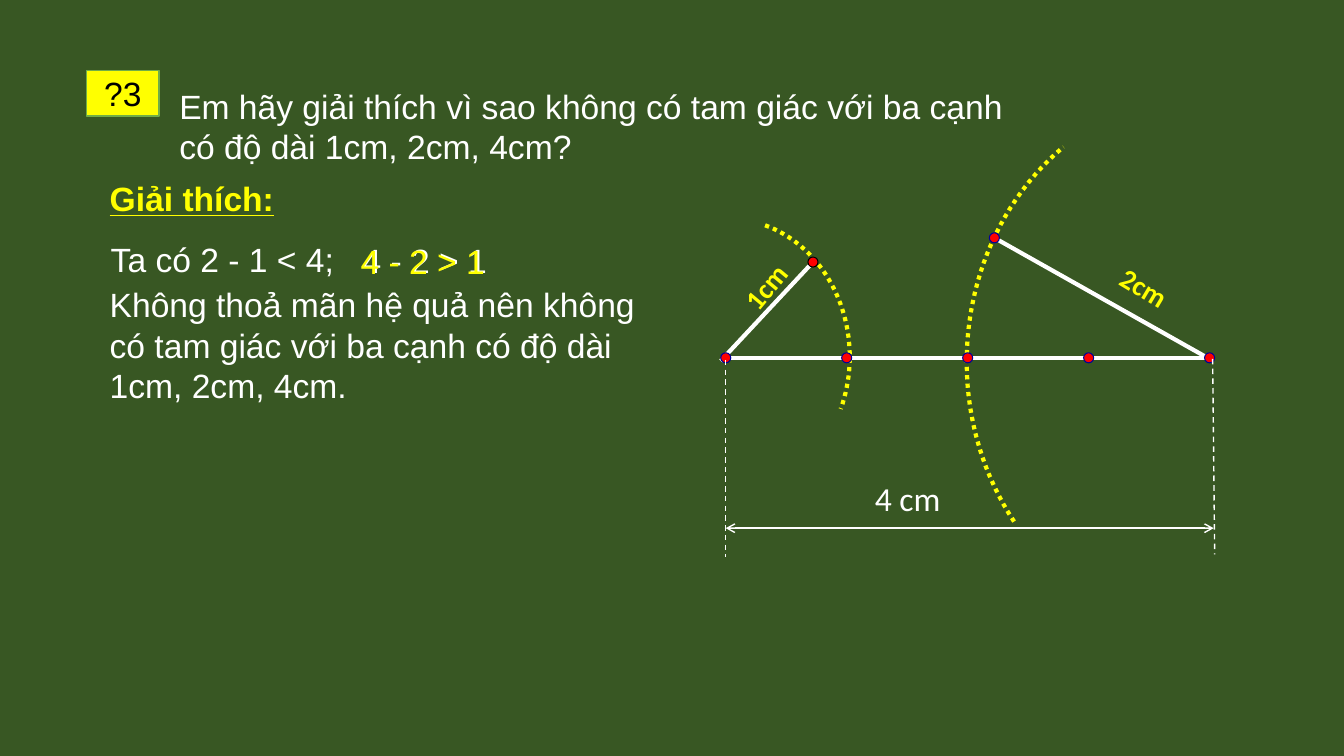
import math

import pptx
import pptx.dml.color
import pptx.enum.dml
import pptx.enum.shapes
import pptx.enum.text
import pptx.oxml
import pptx.oxml.ns
import pptx.util

COLORS = {
    "board": "385723",
    "white": "FFFFFF",
    "yellow": "FFFF00",
    "green": "70AD47",
    "red": "FF0000",
    "navy": "000099",
    "black": "000000",
}
COLUMNS, ROWS = 133.33, 75
DASH = pptx.enum.dml.MSO_LINE.DASH
DOTS = pptx.enum.dml.MSO_LINE.ROUND_DOT


class GeometrySlide:
    """Draws styled elements on one slide, placed on a grid of columns and rows."""

    def __init__(self, presentation):
        self.column = presentation.slide_width / COLUMNS
        self.row = presentation.slide_height / ROWS
        self.slide = presentation.slides.add_slide(presentation.slide_layouts[6])
        self.shapes = self.slide.shapes
        self.paint(self.slide.background.fill, "board")

    def color(self, name):
        return pptx.dml.color.RGBColor.from_string(COLORS[name])

    def paint(self, fill, name):
        fill.solid()
        fill.fore_color.rgb = self.color(name)

    def place(self, *lengths):
        units = (self.column, self.row) * 2
        return [round(length * unit) for length, unit in zip(lengths, units)]

    def stroke(self, shape, name, width, dash=None):
        self.paint(shape.line.fill, name)
        shape.line.width = pptx.util.Pt(width)
        if dash:
            shape.line.dash_style = dash

    def add_runs(self, paragraph, runs, color, size, font="Arial", bold=False, underline=False):
        for text, run_size in runs:
            run = paragraph.add_run()
            run.text = text
            run.font.name = font
            run.font.size = pptx.util.Pt(run_size or size)
            run.font.bold = bold
            run.font.underline = underline
            run.font.color.rgb = self.color(color)

    def text(self, box, runs, color="white", size=24, wrap=True, rotation=0, **style):
        shape = self.shapes.add_textbox(*self.place(*box))
        shape.rotation = rotation
        frame = shape.text_frame
        frame.word_wrap = wrap
        frame.auto_size = pptx.enum.text.MSO_AUTO_SIZE.SHAPE_TO_FIT_TEXT
        self.add_runs(frame.paragraphs[0], runs, color, size, **style)

    def shape(self, kind, box, fill, line, width):
        shape = self.shapes.add_shape(kind, *self.place(*box))
        shape.shadow.inherit = False
        self.paint(shape.fill, fill)
        self.stroke(shape, line, width)
        return shape

    def badge(self, box, label):
        shape = self.shape(pptx.enum.shapes.MSO_SHAPE.RECTANGLE, box, "yellow", "green", 1)
        frame = shape.text_frame
        frame.vertical_anchor = pptx.enum.text.MSO_ANCHOR.MIDDLE
        paragraph = frame.paragraphs[0]
        paragraph.alignment = pptx.enum.text.PP_ALIGN.CENTER
        self.add_runs(paragraph, [(label, None)], "black", 24)

    def point(self, x, y, line="navy"):
        box = (x - 0.5, y - 0.5, 1, 1)
        self.shape(pptx.enum.shapes.MSO_SHAPE.OVAL, box, "red", line, 0)

    def arc(self, center, radii, start, end, steps=40):
        angles = [math.radians(start + (end - start) * i / steps) for i in range(steps + 1)]
        vertices = [
            self.place(center[0] + radii[0] * math.cos(a), center[1] + radii[1] * math.sin(a))
            for a in angles
        ]
        builder = self.shapes.build_freeform(*vertices[0])
        builder.add_line_segments(vertices[1:], close=False)
        shape = builder.convert_to_shape()
        shape.shadow.inherit = False
        shape.fill.background()
        self.stroke(shape, "yellow", 3, DOTS)

    def segment(self, start, end, width=3, dash=None, arrows=False):
        straight = pptx.enum.shapes.MSO_CONNECTOR.STRAIGHT
        connector = self.shapes.add_connector(straight, *self.place(*start, *end))
        self.stroke(connector, "white", width, dash)
        properties = connector._element.spPr
        if arrows:
            line = properties.find(pptx.oxml.ns.qn("a:ln"))
            for tag in ("headEnd", "tailEnd"):
                line.append(self.element(tag, 'type="arrow"'))
        properties.append(self.element("effectLst"))

    def element(self, tag, attributes=""):
        return pptx.oxml.parse_xml(f"<a:{tag} {pptx.oxml.ns.nsdecls('a')} {attributes}/>")


def main():
    presentation = pptx.Presentation()
    presentation.slide_width = pptx.util.Inches(13.33)
    presentation.slide_height = pptx.util.Inches(7.5)
    board = GeometrySlide(presentation)

    board.badge((8.6, 7, 7.2, 4.5), "?3")
    question = "Em hãy giải thích vì sao không có tam giác với ba cạnh có độ dài 1cm, 2cm, 4cm?"
    board.text((16.8, 8, 86, 9.1), [(question, None)])
    board.text((9.9, 17.2, 18.4, 5), [("Giải thích:", None)], "yellow",
               wrap=False, bold=True, underline=True)
    board.text((10, 23.2, 24.2, 5), [("Ta có 2 - 1 < 4;", None)])
    board.text((34.1, 23.3, 17.6, 5), [(" ", 23), ("4 - 2 > 1", None)])
    board.text((34.8, 23.4, 16.2, 5), [("4 - 2 > 1", None)], "yellow")
    conclusion = "Không thoả mãn hệ quả nên không có tam giác với ba cạnh có độ dài 1cm, 2cm, 4cm."
    board.text((9.9, 27.7, 56.1, 13.1), [(conclusion, None)])

    left, base, centimetre = 72, 35.5, 12
    right = left + 4 * centimetre
    short_end, long_end = (80.65, 26), (98.65, 23.6)

    board.arc((120, 35.9), (24.1, 26.7), 143.6, 233)
    board.arc((72.2, 35.4), (12.1, 13.7), -72.2, 22.2)
    board.segment((left - 0.5, base), (right - 0.3, base))
    board.segment(short_end, (left - 0.5, base + 0.3))
    board.segment(long_end, (right - 0.2, base))
    for mark in range(5):
        board.point(left + mark * centimetre, base)
    board.point(*short_end, line="black")

    board.text((85.8, 46.9, 10.8, 5), [("4 cm", None)], font="Calibri")
    for box, label, rotation in (
        ((109.8, 27.5, 11.4, 4.3), "2cm", 31),
        ((71.9, 25, 10.2, 4.3), "1cm", 309.7),
    ):
        board.text(box, [(label, None)], "yellow", 20, rotation=rotation, font="Calibri", bold=True)
    board.point(*long_end)

    board.segment((left, 35.7), (left, 55.3), 1, DASH)
    board.segment((120.3, 35.6), (120.5, 55), 1, DASH)
    board.segment((left, 52.4), (120.4, 52.4), 1, arrows=True)
    presentation.save("out.pptx")


if __name__ == "__main__":
    main()
